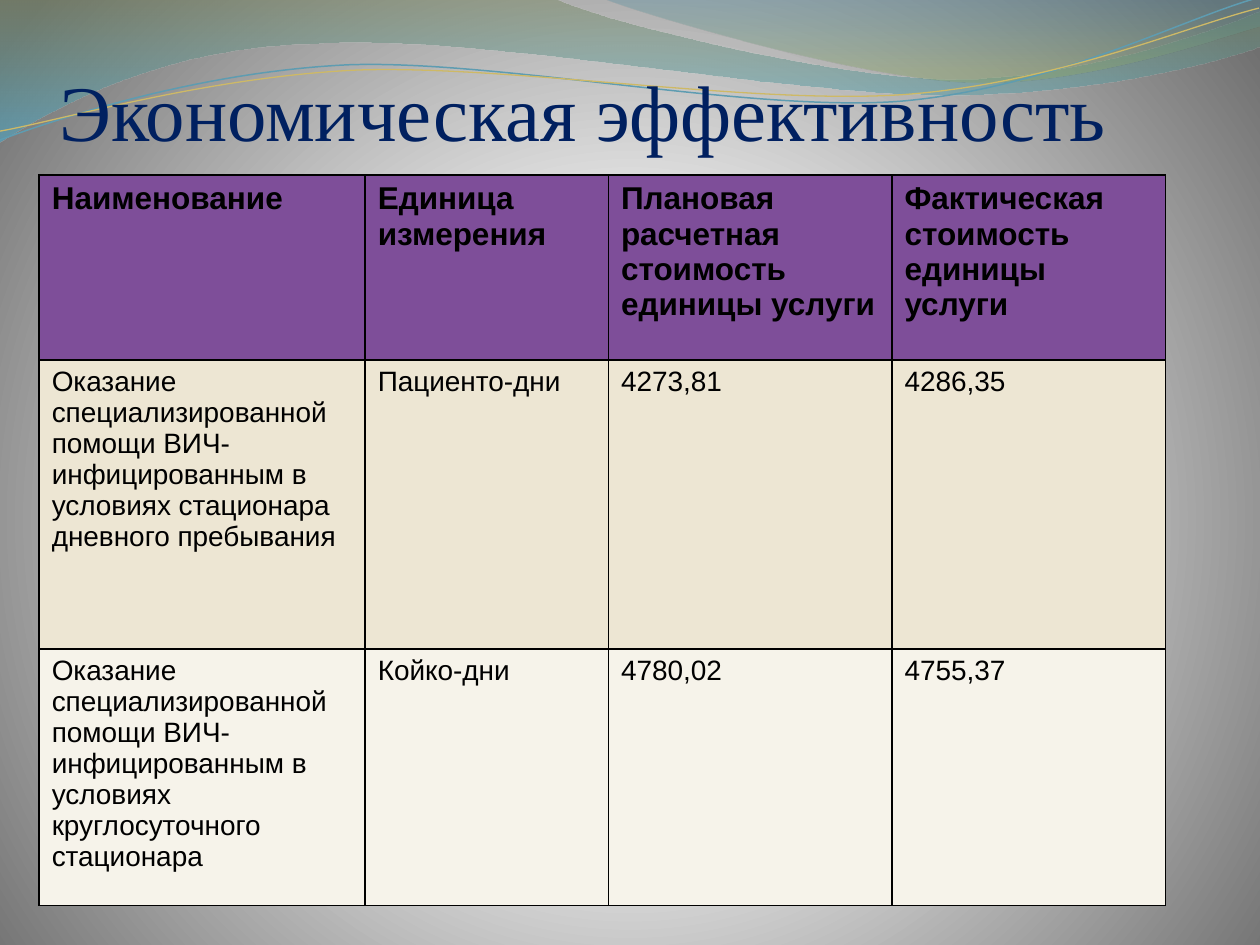
from dataclasses import dataclass
from typing import Any, Optional

import lxml.etree
import pptx
import pptx.dml.color
import pptx.enum.text
import pptx.oxml
import pptx.oxml.ns
import pptx.util

Pt = pptx.util.Pt
qn = pptx.oxml.ns.qn
Point = tuple[float, float]


@dataclass(frozen=True)
class Theme:
    title: str = "002060"
    ink: str = "000000"
    row_fills: tuple[str, ...] = ("7E4E99", "EDE6D3", "F6F3EA")
    title_font: str = "Times New Roman"
    body_font: str = "Arial"
    title_size: float = 45
    header_size: float = 18
    body_size: float = 16
    border: float = 1


@dataclass(frozen=True)
class Stop:
    position: int
    color: str
    opacity: int = 100


@dataclass(frozen=True)
class Wave:
    """Segments hold one point for a straight side, three for a Bezier curve."""
    box: tuple[float, float, float, float]
    start: Point
    segments: tuple[tuple[Point, ...], ...]
    stops: tuple[Stop, ...] = ()
    line_color: Optional[str] = None
    line_width: float = 0
    rotation: float = 0


THEME = Theme()

BACKDROP = (Stop(0, "FFFFFF"), Stop(25, "FFFFFF"), Stop(100, "707070"))
CIRCLE = ('<a:path path="circle"><a:fillToRect l="10000" t="110000" '
          'r="10000" b="100000"/></a:path>')
DOWNWARD = '<a:lin ang="5400000" scaled="1"/>'

WAVES = (
    Wave((-0.75, -0.75, 721.5, 82), (0, 0),
         (((317, -0.75),),
          ((343, 12), (478, 45), (546, 45)),
          ((614, 45), (690, 19), (720, 6.5)),
          ((720.75, 26),),
          ((708, 32), (626, 55), (537, 54)),
          ((448, 54), (275, 20), (185, 24.5)),
          ((93, 26), (33, 60), (-0.75, 81.25)),
          ((0, 0),)),
         stops=(Stop(0, "74855E", 45), Stop(100, "4AACCE", 55))),
    Wave((345, -0.75, 375, 50.25), (345, -0.75),
         (((366, 8), (491, 45), (554, 47)),
          ((616, 49.5), (692, 23), (720, 15)),
          ((720, 0),),
          ((345, -0.75),)),
         stops=(Stop(0, "45889F", 30), Stop(80, "8AA36D", 45))),
    Wave((-1.4, 15.8, 721.4, 51.1), (-1.4, 63),
         (((34.1, 51.7), (114.3, 29.5), (199.4, 29.5)),
          ((284.4, 30.5), (425.9, 67.2), (512, 65.2)),
          ((599.3, 62.3), (676.1, 25.9), (720, 15.8))),
         line_color="5E9CB1", line_width=0.85, rotation=357.3),
    Wave((-1.4, 21.6, 722.2, 41.8), (-1.4, 58),
         (((33.1, 53.6), (118.2, 32.6), (204.3, 32.7)),
          ((290.3, 33.7), (429.1, 63.3), (515.3, 61.4)),
          ((601.5, 59.4), (679, 30), (720.8, 21.6))),
         line_color="CEB966", line_width=0.75, rotation=357.3),
)

HEADING = "Экономическая эффективность"
CARE = "Оказание специализированной помощи ВИЧ-инфицированным в условиях "
COSTS = (
    ("Наименование", "Единица измерения",
     "Плановая расчетная стоимость единицы услуги",
     "Фактическая стоимость единицы услуги"),
    (CARE + "стационара дневного пребывания", "Пациенто-дни", "4273,81", "4286,35"),
    (CARE + "круглосуточного стационара", "Койко-дни", "4780,02", "4755,37"),
)
COLUMN_WIDTHS = (186.3, 139, 162, 156.2)
ROW_HEIGHTS = (105.7, 165.1, 146.6)


def rgb(color: str) -> pptx.dml.color.RGBColor:
    return pptx.dml.color.RGBColor.from_string(color)


def apply(target: Any, values: dict[str, Any]) -> None:
    for name, value in values.items():
        setattr(target, name, value)


def format_font(font: Any, face: str, size: float, color: str, bold: bool) -> None:
    apply(font, {"name": face, "size": Pt(size), "bold": bold})
    font.color.rgb = rgb(color)


def set_gradient(fill: Any, owner: Any, stops: tuple[Stop, ...], direction: str) -> None:
    fill.gradient()
    gradient = next(owner.iter(qn("a:gradFill")))
    stop_xml = "".join(
        f'<a:gs pos="{stop.position * 1000}"><a:srgbClr val="{stop.color}">'
        f'<a:alpha val="{stop.opacity * 1000}"/></a:srgbClr></a:gs>' for stop in stops)
    gradient.getparent().replace(gradient, pptx.oxml.parse_xml(
        f'<a:gradFill {pptx.oxml.ns.nsdecls("a")} rotWithShape="1">'
        f'<a:gsLst>{stop_xml}</a:gsLst>{direction}</a:gradFill>'))


def bend_outline(ribbon: Any, wave: Wave) -> None:
    """Give the freeform true Bezier curves, measured from its box corner."""
    left, top = wave.box[:2]
    outline = next(ribbon._element.iter(qn("a:path")))
    for side in list(outline):
        outline.remove(side)
    for index, points in enumerate(((wave.start,), *wave.segments)):
        kind = "moveTo" if index == 0 else "lnTo" if len(points) == 1 else "cubicBezTo"
        segment = lxml.etree.SubElement(outline, qn(f"a:{kind}"))
        for x, y in points:
            lxml.etree.SubElement(segment, qn("a:pt"),
                                  x=str(Pt(x - left)), y=str(Pt(y - top)))
    if wave.stops:
        lxml.etree.SubElement(outline, qn("a:close"))


def draw_wave(slide: Any, wave: Wave) -> None:
    left, top, width, height = (Pt(length) for length in wave.box)
    builder = slide.shapes.build_freeform(left, top)
    builder.add_line_segments([(left + width, top + height)], close=False)
    ribbon = builder.convert_to_shape()
    bend_outline(ribbon, wave)
    ribbon.rotation = wave.rotation
    ribbon.shadow.inherit = False
    if wave.stops:
        set_gradient(ribbon.fill, ribbon._element, wave.stops, DOWNWARD)
        ribbon.line.fill.background()
    else:
        ribbon.fill.background()
        ribbon.line.color.rgb = rgb(wave.line_color)
        ribbon.line.width = Pt(wave.line_width)


def draw_heading(slide: Any) -> None:
    heading = slide.shapes.title
    apply(heading, {"left": Pt(34), "top": Pt(0), "width": Pt(648), "height": Pt(90)})
    frame = heading.text_frame
    frame.text = HEADING
    apply(frame, {"margin_left": 0, "margin_right": 0,
                  "margin_top": Pt(3.6), "margin_bottom": 0, "word_wrap": True,
                  "auto_size": pptx.enum.text.MSO_AUTO_SIZE.NONE,
                  "vertical_anchor": pptx.enum.text.MSO_ANCHOR.BOTTOM})
    paragraph = frame.paragraphs[0]
    paragraph.alignment = pptx.enum.text.PP_ALIGN.LEFT
    format_font(paragraph.runs[0].font, THEME.title_font, THEME.title_size,
                THEME.title, False)
    # The heading lies over the waves
    slide.shapes._spTree.append(heading._element)


def add_borders(cell: Any) -> None:
    properties = cell._tc.get_or_add_tcPr()
    for side in ("a:lnL", "a:lnR", "a:lnT", "a:lnB"):
        border = lxml.etree.SubElement(properties, qn(side), w=str(Pt(THEME.border)))
        fill = lxml.etree.SubElement(border, qn("a:solidFill"))
        lxml.etree.SubElement(fill, qn("a:srgbClr"), val=THEME.ink)


def draw_costs(slide: Any) -> None:
    costs = slide.shapes.add_table(
        len(COSTS), len(COLUMN_WIDTHS), Pt(22.4), Pt(100),
        Pt(sum(COLUMN_WIDTHS)), Pt(sum(ROW_HEIGHTS))).table
    for column, width in zip(costs.columns, COLUMN_WIDTHS):
        column.width = Pt(width)
    for index, (row, height) in enumerate(zip(costs.rows, ROW_HEIGHTS)):
        row.height = Pt(height)
        header = index == 0
        size = THEME.header_size if header else THEME.body_size
        for cell, wording in zip(row.cells, COSTS[index]):
            cell.text = wording
            add_borders(cell)
            cell.fill.solid()
            cell.fill.fore_color.rgb = rgb(THEME.row_fills[index])
            format_font(cell.text_frame.paragraphs[0].runs[0].font,
                        THEME.body_font, size, THEME.ink, header)


def main() -> None:
    deck = pptx.Presentation()
    apply(deck, {"slide_width": Pt(720), "slide_height": Pt(540)})
    slide = deck.slides.add_slide(deck.slide_layouts[5])
    # Background and waves
    set_gradient(slide.background.fill, slide._element, BACKDROP, CIRCLE)
    for wave in WAVES:
        draw_wave(slide, wave)
    # Content
    draw_heading(slide)
    draw_costs(slide)
    deck.save("out.pptx")


if __name__ == "__main__":
    main()
